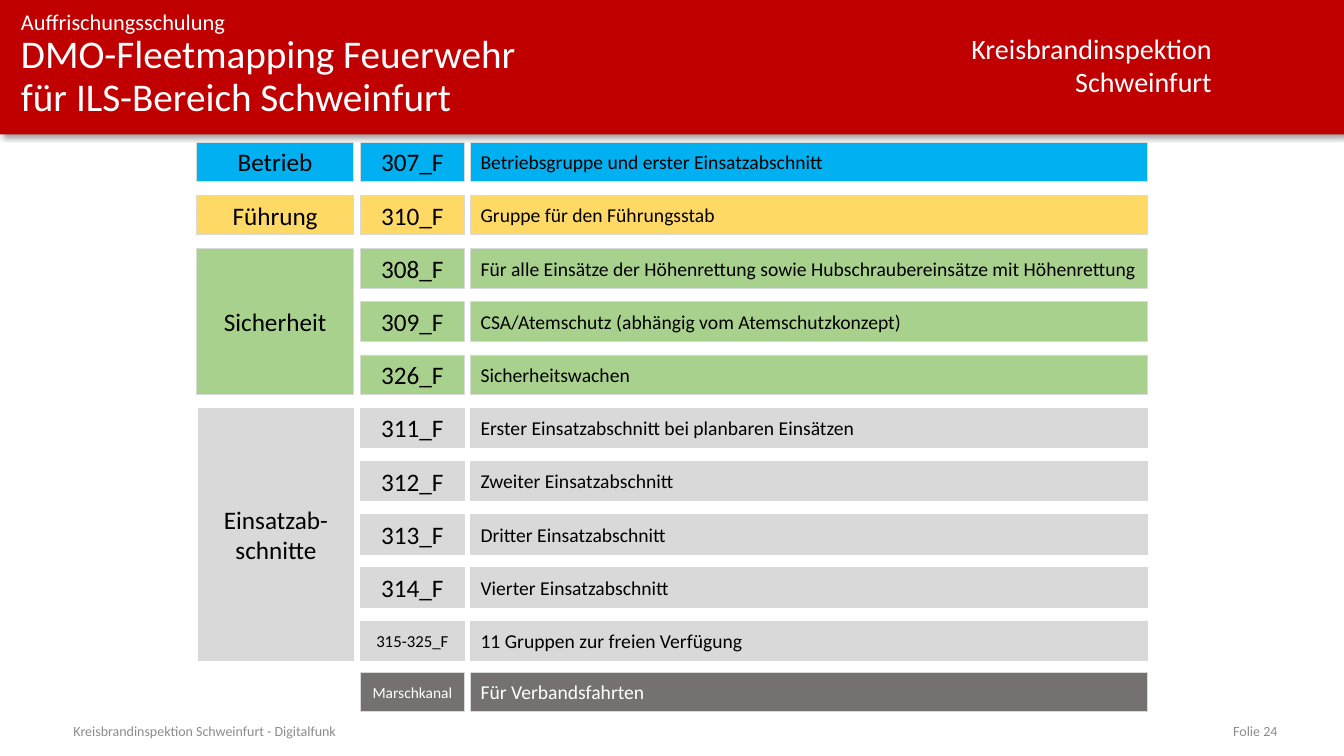
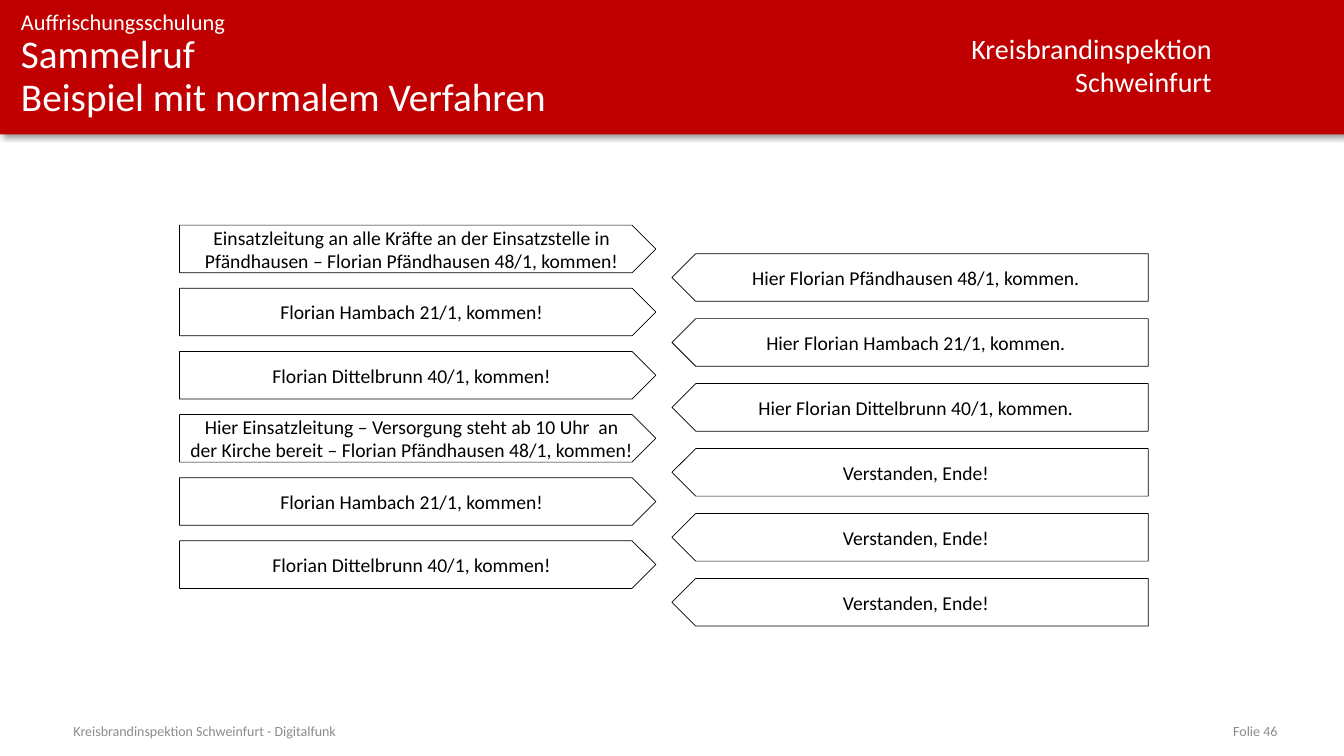
from dataclasses import dataclass

from lxml.etree import SubElement
from pptx import Presentation
from pptx.dml.color import RGBColor as RGB
from pptx.enum.shapes import MSO_SHAPE as Geo, PP_PLACEHOLDER as Role
from pptx.enum.text import MSO_ANCHOR as Anchor, MSO_AUTO_SIZE as Fit, PP_ALIGN as Align
from pptx.oxml.ns import qn
from pptx.util import Pt

FONT = "Calibri"
RED, WHITE, BLACK = "C00000", "FFFFFF", "000000"
BLUE, GOLD, GREEN = "00B0F0", "FFD966", "A9D18E"
SILVER, SLATE, MUTED = "D9D9D9", "767171", "8C8C8C"
WIDTH, BAND = 960, 96
EDGE = 15


@dataclass
class Rect:
    left: float
    top: float
    width: float
    height: float

    def pts(self) -> list:
        return [Pt(n) for n in (self.left, self.top, self.width, self.height)]


@dataclass
class Style:
    size: float
    hue: str = WHITE
    align: Align = Align.LEFT
    anchor: Anchor = Anchor.TOP
    pad: bool = False
    gap: float = 1.0


@dataclass
class Row:
    code: str
    text: str
    size: float = 18


@dataclass
class Group:
    label: str
    fill: str
    rows: list[Row]
    ink: str = BLACK
    inset: float = 0


GROUPS = [
    Group("Betrieb", BLUE, [Row("307_F", "Betriebsgruppe und erster Einsatzabschnitt")]),
    Group("Führung", GOLD, [Row("310_F", "Gruppe für den Führungsstab")]),
    Group("Sicherheit", GREEN, [
        Row("308_F", "Für alle Einsätze der Höhenrettung sowie "
                     "Hubschraubereinsätze mit Höhenrettung"),
        Row("309_F", "CSA/Atemschutz (abhängig vom Atemschutzkonzept)"),
        Row("326_F", "Sicherheitswachen"),
    ]),
    Group("Einsatzab-schnitte", SILVER, [
        Row("311_F", "Erster Einsatzabschnitt bei planbaren Einsätzen"),
        Row("312_F", "Zweiter Einsatzabschnitt"),
        Row("313_F", "Dritter Einsatzabschnitt"),
        Row("314_F", "Vierter Einsatzabschnitt"),
        Row("315-325_F", "11 Gruppen zur freien Verfügung", 12),
    ], inset=1.2),
    Group("", SLATE, [Row("Marschkanal", "Für Verbandsfahrten", 11)], WHITE),
]

CALLS = [
    "Einsatzleitung an alle Kräfte an der Einsatzstelle in "
    "Pfändhausen – Florian Pfändhausen 48/1, kommen!",
    "Florian Hambach 21/1, kommen!",
    "Florian Dittelbrunn 40/1, kommen!",
    "Hier Einsatzleitung – Versorgung steht ab 10 Uhr  an der Kirche bereit – "
    "Florian Pfändhausen 48/1, kommen!",
    "Florian Hambach 21/1, kommen!",
    "Florian Dittelbrunn 40/1, kommen!",
]
REPLIES = [
    "Hier Florian Pfändhausen 48/1, kommen.",
    "Hier Florian Hambach 21/1, kommen.",
    "Hier Florian Dittelbrunn 40/1, kommen.",
    *["Verstanden, Ende!"] * 3,
]


def color(code: str) -> RGB:
    return RGB.from_string(code)


def write(shape, text: str, style: Style) -> None:
    frame = shape.text_frame
    frame.text = text
    frame.word_wrap = True
    frame.auto_size = Fit.NONE
    frame.vertical_anchor = style.anchor
    if not style.pad:
        frame.margin_left = frame.margin_right = 0
        frame.margin_top = frame.margin_bottom = 0
    for para in frame.paragraphs:
        para.alignment = style.align
        para.line_spacing = style.gap
        for run in para.runs:
            run.font.name = FONT
            run.font.size = Pt(style.size)
            run.font.color.rgb = color(style.hue)


def label(slide, rect: Rect, text: str, style: Style):
    box = slide.shapes.add_textbox(*rect.pts())
    write(box, text, style)
    return box


def block(slide, rect: Rect, fill: str, line: str = "", geo: Geo = Geo.RECTANGLE):
    shape = slide.shapes.add_shape(geo, *rect.pts())
    shape.shadow.inherit = False
    shape.fill.solid()
    shape.fill.fore_color.rgb = color(fill)
    if line:
        shape.line.color.rgb = color(line)
        shape.line.width = Pt(0.5)
    else:
        shape.line.fill.background()
    return shape


def shade(shape) -> None:
    """Give the shape a soft shadow to the lower right."""
    effect = shape.element.spPr.find(qn("a:effectLst"))
    outer = SubElement(effect, qn("a:outerShdw"), blurRad=str(Pt(4)), dist=str(Pt(3)),
                       dir="2700000", algn="tl", rotWithShape="0")
    tint = SubElement(outer, qn("a:srgbClr"), val=BLACK)
    SubElement(tint, qn("a:alpha"), val="40000")


def dress(layout, slide) -> None:
    """Put the band and the fixed texts on the layout, by way of a slide."""
    for holder in list(layout.placeholders):
        if holder.placeholder_format.type != Role.TITLE:
            layout.shapes.element.remove(holder.element)
    band = block(slide, Rect(0, 0, WIDTH, BAND), RED)
    shade(band)
    parts = [
        band,
        label(slide, Rect(622, 18.8, 250.6, 55.5), "Kreisbrandinspektion\nSchweinfurt",
              Style(20, align=Align.RIGHT, pad=True)),
        label(slide, Rect(EDGE, 6, 607, 19.4), "Auffrischungsschulung", Style(16)),
        label(slide, Rect(52.5, 515, 580, 14.4),
              "Kreisbrandinspektion Schweinfurt - Digitalfunk",
              Style(10, MUTED, anchor=Anchor.MIDDLE)),
    ]
    for part in parts:
        layout.shapes.element.append(part.element)


def head(slide, title: str, page: int) -> None:
    holder = slide.shapes.title
    holder.left, holder.top, holder.width, holder.height = Rect(EDGE, 25, 607, 71).pts()
    write(holder, title, Style(28, gap=0.9))
    label(slide, Rect(688.5, 515, 224, 14.4), f"Folie {page}",
          Style(10, MUTED, Align.RIGHT, Anchor.MIDDLE))


def fleet(slide) -> None:
    """Draw the talk groups, each with one label beside its rows."""
    top, pitch, high = 101.5, 38, 28.2
    for group in GROUPS:
        if not group.label:
            top -= 1.3

        def cell(left: float, width: float, y: float, height: float, text: str,
                 size: float, align: Align = Align.CENTER) -> None:
            shape = block(slide, Rect(left, y, width, height), group.fill, SILVER)
            write(shape, text, Style(size, group.ink, align, Anchor.MIDDLE, True))

        if group.label:
            tall = pitch * (len(group.rows) - 1) + high
            cell(140.5 + group.inset, 112 - group.inset, top, tall, group.label, 18)
        for row in group.rows:
            cell(257.5, 74.2, top, high, row.code, row.size)
            cell(336.2, 483.6, top, high, row.text, 14, Align.LEFT)
            top += pitch


def talk(slide, lines: list[str], left: float, top: float, pitch: float,
         flip: bool = False) -> None:
    """Stack one side of the radio talk as arrows."""
    for i, text in enumerate(lines):
        rect = Rect(left, top + i * pitch, 340.2, 34)
        arrow = block(slide, rect, WHITE, BLACK, Geo.PENTAGON)
        if flip:
            arrow.element.spPr.find(qn("a:xfrm")).set("flipH", "1")
        write(arrow, text, Style(14, BLACK, Align.CENTER, Anchor.MIDDLE, True))


def main() -> None:
    deck = Presentation()
    deck.slide_width, deck.slide_height = Pt(WIDTH), Pt(540)
    layout = deck.slide_layouts[5]

    plan = deck.slides.add_slide(layout)
    dress(layout, plan)
    head(plan, "DMO-Fleetmapping Feuerwehr\vfür ILS-Bereich Schweinfurt", 24)
    fleet(plan)

    radio = deck.slides.add_slide(layout)
    head(radio, "Sammelruf\vBeispiel mit normalem Verfahren", 46)
    talk(radio, CALLS, 128.3, 160.8, 45.1)
    talk(radio, REPLIES, 480, 181.2, 46.4, flip=True)

    deck.save("out.pptx")


if __name__ == "__main__":
    main()
